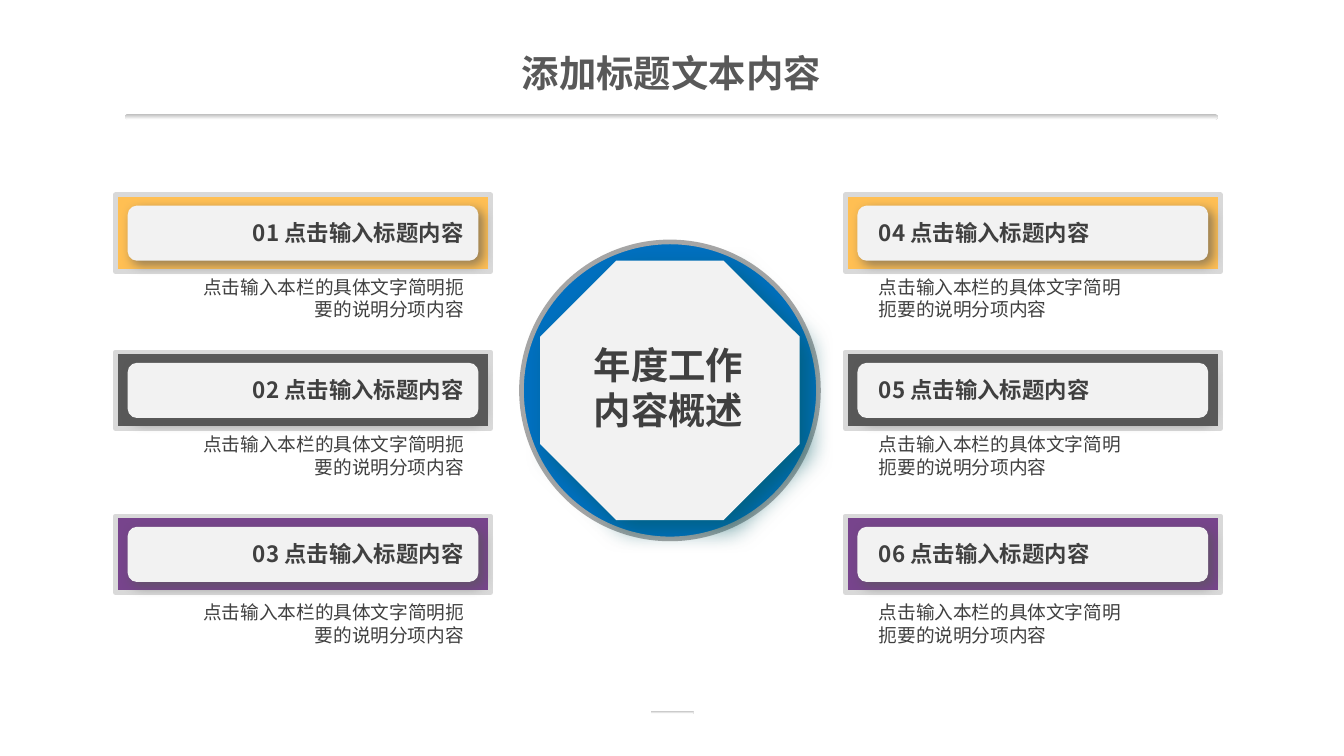
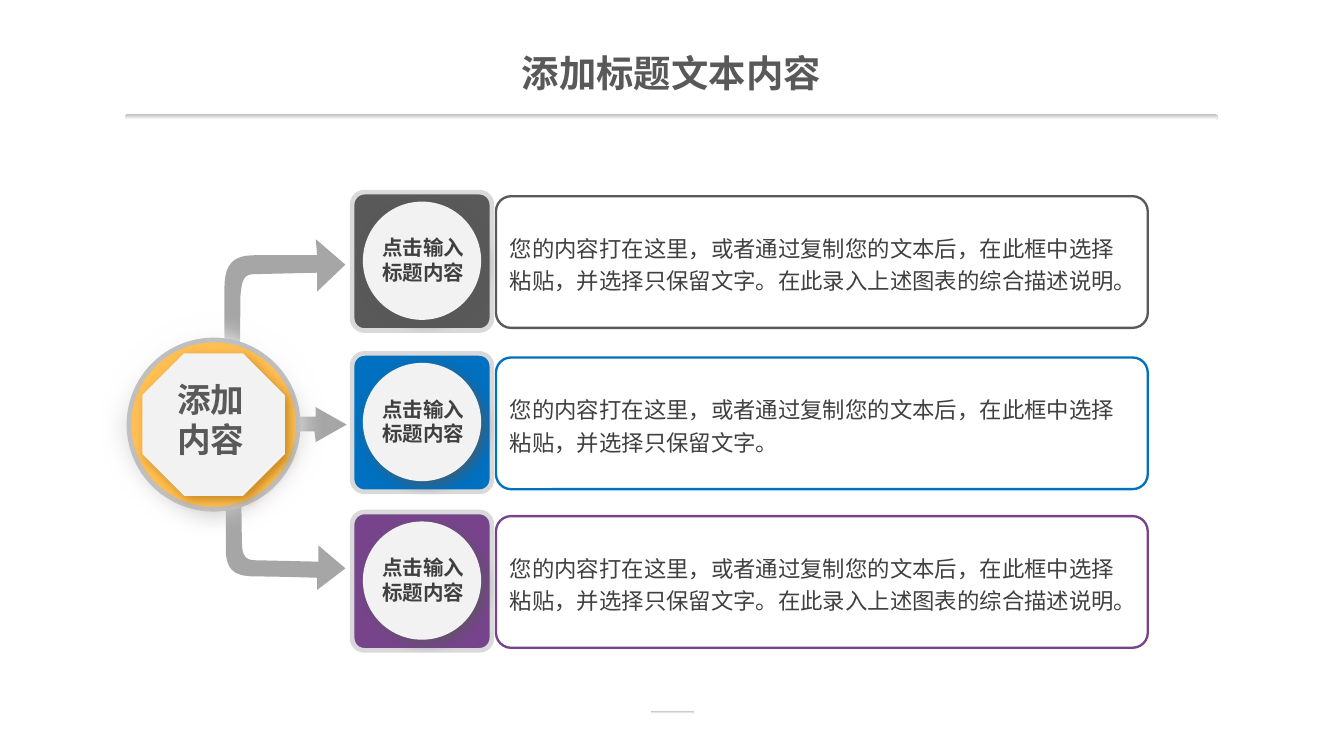
from lxml import etree
from pptx import Presentation
from pptx.dml.color import RGBColor
from pptx.enum.shapes import MSO_SHAPE
from pptx.enum.text import MSO_ANCHOR, MSO_AUTO_SIZE, PP_ALIGN
from pptx.oxml.ns import qn
from pptx.util import Inches, Pt

ROUND, OVAL, OCTAGON = MSO_SHAPE.ROUNDED_RECTANGLE, MSO_SHAPE.OVAL, MSO_SHAPE.OCTAGON
LEFT, CENTER, RIGHT = PP_ALIGN.LEFT, PP_ALIGN.CENTER, PP_ALIGN.RIGHT
TOP, MIDDLE = MSO_ANCHOR.TOP, MSO_ANCHOR.MIDDLE
GROW = MSO_AUTO_SIZE.SHAPE_TO_FIT_TEXT

ORANGE = RGBColor(0xFF, 0xBF, 0x53)
GRAY = RGBColor(0x59, 0x59, 0x59)
PURPLE = RGBColor(0x77, 0x44, 0x8C)
BLUE = RGBColor(0x00, 0x70, 0xC0)
INK = RGBColor(0x40, 0x40, 0x40)
PALE = RGBColor(0xF2, 0xF2, 0xF2)
WHITE = RGBColor(0xFF, 0xFF, 0xFF)
FRAME = RGBColor(0xD9, 0xD9, 0xD9)
SILVER = RGBColor(0xBF, 0xBF, 0xBF)
STEEL = RGBColor(0xA6, 0xA6, 0xA6)
TEAL_SHADE = RGBColor(0x00, 0x59, 0x62)
AMBER_SHADE = RGBColor(0xA9, 0x6A, 0x00)
CJK, LATIN = "Noto Sans CJK SC", "Arial"

W, H = 10, 10 * 9 / 16
TITLE = "添加标题文本内容"
HEADING = "点击输入标题内容"
DETAIL = "点击输入本栏的具体文字简明扼要的说明分项内容"
SUMMARY = "年度工作\n内容概述"
HUB = "添加\n内容"
SHORT = "您的内容打在这里，或者通过复制您的文本后，在此框中选择粘贴，并选择只保留文字。"
LONG = SHORT + "在此录入上述图表的综合描述说明。"

COLUMNS = [
    dict(x=0.86, align=RIGHT, head_x=1.31, detail_x=1.51, detail_w=1.94),
    dict(x=6.29, align=LEFT, head_x=6.54, detail_x=6.54, detail_w=1.84),
]
BANDS = [(1.45, 2.15, ORANGE), (2.62, 3.32, GRAY), (3.84, 4.57, PURPLE)]
STEPS = [(1.43, GRAY, LONG), (2.63, BLUE, SHORT), (3.81, PURPLE, LONG)]

ARROWS = [
    [(1.79, 3.29), (1.8, 4.03), (1.8, 4.17, 1.85, 4.17, 1.93, 4.17), (2.37, 4.18),
     (2.37, 4.06), (2.57, 4.23), (2.36, 4.39), (2.36, 4.3),
     (2.36, 4.3, 2.07, 4.29, 1.9, 4.29), (1.73, 4.29, 1.68, 4.23, 1.68, 4.08),
     (1.68, 3.28), (1.69, 3.15, 1.76, 3.16, 1.79, 3.29)],
    [(1.51, 3.22), (2.34, 3.21), (2.35, 3.29), (2.58, 3.16), (2.35, 3.03),
     (2.35, 3.1), (1.51, 3.11)],
    [(1.78, 3.06), (1.79, 2.2), (1.8, 2.04, 1.84, 2.04, 1.92, 2.04), (2.36, 2.03),
     (2.36, 2.17), (2.57, 1.97), (2.35, 1.78), (2.36, 1.9),
     (2.36, 1.9, 2.06, 1.9, 1.89, 1.9), (1.73, 1.9, 1.67, 1.97, 1.67, 2.15),
     (1.67, 3.08), (1.69, 3.23, 1.76, 3.21, 1.78, 3.06)],
]


def add_effect(sp, tag, **attrs):
    effects = sp.element.spPr.find(qn("a:effectLst"))
    return etree.SubElement(effects, qn(tag), {k: str(v) for k, v in attrs.items()})


def shade(sp, color, blur=6, dist=3):
    shadow = add_effect(sp, "a:outerShdw", blurRad=Pt(blur), dist=Pt(dist),
                        dir=45 * 60000, algn="tl", rotWithShape=0)
    clr = etree.SubElement(shadow, qn("a:srgbClr"), val=str(color))
    etree.SubElement(clr, qn("a:alpha"), val="64000")


def paint(sp, fill=None, line=None, width=2.5):
    sp.shadow.inherit = False
    if fill is None:
        sp.fill.background()
    else:
        sp.fill.solid()
        sp.fill.fore_color.rgb = fill
    if line is None:
        sp.line.fill.background()
    else:
        sp.line.color.rgb = line
        sp.line.width = Pt(width)


def add_shape(s, kind, x, y, w, h, fill=None, line=None, width=2.5, adj=None):
    sp = s.shapes.add_shape(kind, Inches(x), Inches(y), Inches(w), Inches(h))
    paint(sp, fill, line, width)
    if adj is not None:
        sp.adjustments[0] = adj
    return sp


def fade(sp, start, end):
    sp.fill.gradient()
    sp.fill.gradient_angle = 270
    for stop, color in zip(sp.fill.gradient_stops, (start, end)):
        stop.color.rgb = color


def write(sp, text, size, color=INK, bold=False, align=LEFT, anchor=TOP,
          inset=(0.1, 0.05), font=CJK, spacing=None):
    tf = sp.text_frame
    tf.word_wrap = True
    tf.vertical_anchor = anchor
    tf.margin_left = tf.margin_right = Inches(inset[0])
    tf.margin_top = tf.margin_bottom = Inches(inset[1])
    tf.text = text
    for p in tf.paragraphs:
        p.alignment = align
        if spacing:
            p.line_spacing = spacing
        for r in p.runs:
            r.font.size = Pt(size)
            r.font.bold = bold
            r.font.name = font
            r.font.color.rgb = color
            etree.SubElement(r.font._element, qn("a:ea"), typeface=CJK)


def add_text(s, x, y, w, h, text, size, grow=False, **style):
    sp = s.shapes.add_textbox(Inches(x), Inches(y), Inches(w), Inches(h))
    write(sp, text, size, **style)
    if grow:
        sp.text_frame.auto_size = GROW


def curve_points(start, curve, steps=10):
    (x0, y0), (x1, y1, x2, y2, x3, y3) = start, curve
    for i in range(1, steps + 1):
        t = i / steps
        u = 1 - t
        yield tuple(u**3 * a + 3 * u * u * t * b + 3 * u * t * t * c + t**3 * d
                    for a, b, c, d in ((x0, x1, x2, x3), (y0, y1, y2, y3)))


def add_arrow(s, outline):
    points = outline[:1]
    for part in outline[1:]:
        points = points + (list(curve_points(points[-1], part)) if len(part) == 6 else [part])
    points = [(Inches(x), Inches(y)) for x, y in points]
    builder = s.shapes.build_freeform(*points[0], scale=1.0)
    builder.add_line_segments(points[1:], close=True)
    paint(builder.convert_to_shape(), STEEL)


def add_slide(prs):
    s = prs.slides.add_slide(prs.slide_layouts[6])
    for x, y, w, h in ((0.93, 0.85, 8.13, 0.04), (4.84, 5.29, 0.32, 0.02)):
        fade(add_shape(s, ROUND, x, y, w, h, adj=0.5), SILVER, WHITE)
    add_text(s, 3.07, 0.33, 3.85, 0.41, TITLE, 20, grow=True, color=GRAY, bold=True,
             align=CENTER, inset=(0.07, 0.04), font=LATIN)
    return s


def build_overview(prs):
    s = add_slide(prs)
    for i, col in enumerate(COLUMNS):
        for j, (y, detail_y, color) in enumerate(BANDS):
            add_shape(s, ROUND, col["x"], y, 2.79, 0.57, color, FRAME, adj=0)
            plate = add_shape(s, ROUND, col["x"] + 0.09, y + 0.08, 2.61, 0.41, PALE)
            shade(plate, GRAY)
            number = i * len(BANDS) + j + 1
            add_text(s, col["head_x"], y + 0.13, 2.14, 0.31, f"{number:02d} {HEADING}", 12,
                     bold=True, align=col["align"], inset=(0, 0.05))
            add_text(s, col["detail_x"], detail_y, col["detail_w"], 0.14, DETAIL, 10,
                     align=col["align"], anchor=MIDDLE, inset=(0, 0.05))
    add_shape(s, OVAL, 3.88, 1.8, 2.21, 2.21, BLUE, STEEL)
    shade(add_shape(s, OCTAGON, 4.02, 1.94, 1.93, 1.93, PALE), TEAL_SHADE, 13, 7)
    add_text(s, 4.15, 2.5, 1.65, 0.77, SUMMARY, 20, grow=True, bold=True, align=CENTER)


def build_steps(prs):
    s = add_slide(prs)
    for outline in ARROWS:
        add_arrow(s, outline)
    for y, color, text in STEPS:
        box = add_shape(s, ROUND, 3.69, y + 0.03, 4.85, 0.98, line=color, width=1.25, adj=0.115)
        write(box, text, 12, anchor=MIDDLE, inset=(0.07, 0.03), spacing=1.2)
    halo = add_shape(s, OVAL, 0.72, 2.29, 1.74, 1.74)
    fade(halo, WHITE, SILVER)
    add_effect(halo, "a:softEdge", rad=Inches(0.18))
    add_shape(s, OVAL, 0.96, 2.53, 1.26, 1.26, ORANGE, SILVER)
    shade(add_shape(s, OCTAGON, 1.06, 2.63, 1.06, 1.06, PALE), AMBER_SHADE)
    add_text(s, 1.05, 2.77, 1.04, 0.71, HUB, 18, grow=True, color=GRAY, bold=True,
             align=CENTER, font=LATIN)
    for y, color, _ in STEPS:
        add_shape(s, ROUND, 2.62, y, 1.04, 1.03, color, FRAME, adj=0.09)
        shade(add_shape(s, OVAL, 2.7, y + 0.07, 0.88, 0.88, PALE), GRAY)
        add_text(s, 2.73, y + 0.41, 0.84, 0.19, HEADING, 11, bold=True,
                 align=CENTER, anchor=MIDDLE)


def main():
    prs = Presentation()
    prs.slide_width, prs.slide_height = Inches(W), Inches(H)
    build_overview(prs)
    build_steps(prs)
    prs.save("out.pptx")


if __name__ == "__main__":
    main()
